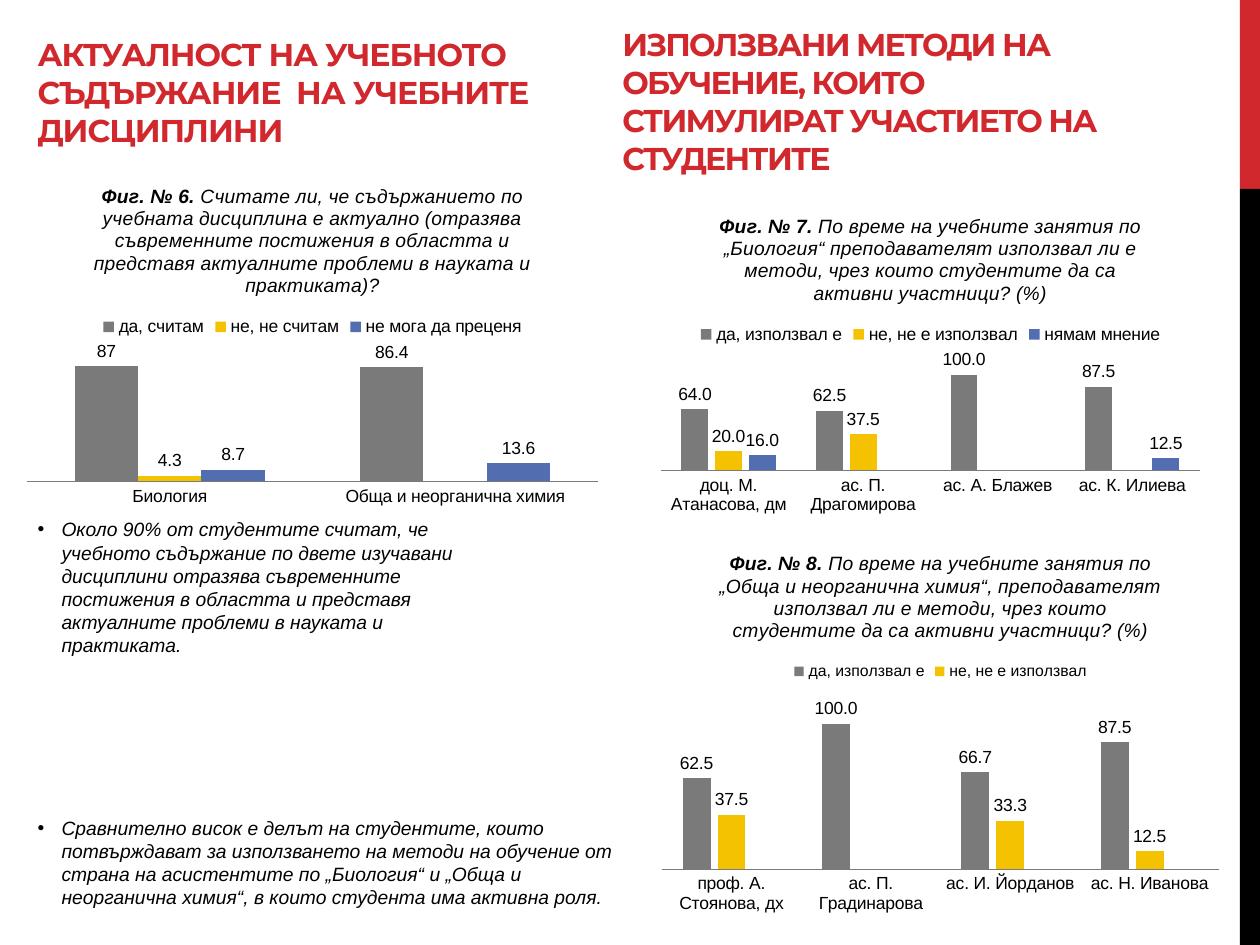
from lxml.etree import SubElement
from pptx import Presentation
from pptx.chart.data import CategoryChartData
from pptx.dml.color import RGBColor
from pptx.enum.chart import XL_CHART_TYPE, XL_LABEL_POSITION, XL_LEGEND_POSITION, XL_TICK_MARK
from pptx.enum.shapes import MSO_SHAPE
from pptx.enum.text import MSO_ANCHOR
from pptx.oxml import parse_xml
from pptx.oxml.ns import nsdecls, qn
from pptx.util import Pt

RED = RGBColor(0xD1, 0x28, 0x2E)
BLACK = RGBColor(0, 0, 0)
GRAY = RGBColor(0x7A, 0x7A, 0x7A)
YELLOW = RGBColor(0xF5, 0xC2, 0x01)
BLUE = RGBColor(0x52, 0x6D, 0xB0)
SERIES_COLORS = (GRAY, YELLOW, BLUE)

PX = 9144  # 100 px to the inch
DECIMAL = "0.0;[Red]0.0"
HEADING = {"name": "Montserrat", "size": Pt(18), "bold": True}
BODY = {"name": "Arial", "size": Pt(11), "italic": True}
CAPTION = {**BODY, "bold": False}
FIGURE_NO = {**BODY, "bold": True}
CHART = {"name": "Arial", "size": Pt(10)}


class SlideBuilder:
    def __init__(self, slide):
        self.slide = slide

    def box(self, *px):
        return [round(value * PX) for value in px]

    def style(self, font, formats, color=BLACK):
        for key, value in formats.items():
            setattr(font, key, value)
        font.color.rgb = color

    def band(self, at, color):
        band = self.slide.shapes.add_shape(MSO_SHAPE.RECTANGLE, *self.box(*at))
        band.shadow.inherit = False
        band.fill.solid()
        band.fill.fore_color.rgb = color
        band.line.fill.background()

    def text(self, at, words, formats, color=BLACK, anchor=MSO_ANCHOR.TOP):
        frame = self.slide.shapes.add_textbox(*self.box(*at)).text_frame
        frame.word_wrap = True
        frame.vertical_anchor = anchor
        paragraph = frame.paragraphs[0]
        run = paragraph.add_run()
        run.text = words
        self.style(run.font, formats, color)
        return paragraph, run

    def heading(self, at, words, anchor, spacing):
        _, run = self.text(at, words, HEADING, RED, anchor)
        run.font._element.set("spc", str(spacing))

    def bullet(self, at, words):
        paragraph, _ = self.text(at, words, BODY)
        paragraph.space_after = Pt(10)
        properties = paragraph._p.get_or_add_pPr()
        properties.set("marL", str(19 * PX))
        properties.set("indent", str(-19 * PX))
        SubElement(properties, qn("a:buFont")).set("typeface", "Arial")
        SubElement(properties, qn("a:buChar")).set("char", "•")

    def chart(self, at, figure, question, categories, series, plot_y, plot_h,
              top, formats, overlap=-25, legend_size=10, unlisted=None):
        data = CategoryChartData()
        data.categories = categories
        for name, values in series:
            data.add_series(name, values)
        chart = self.slide.shapes.add_chart(
            XL_CHART_TYPE.COLUMN_CLUSTERED, *self.box(*at), data).chart
        self.style(chart.font, CHART)

        # Caption
        chart.has_title = True
        caption = chart.chart_title.text_frame.paragraphs[0]
        for words, look in ((figure + " ", FIGURE_NO), (question, CAPTION)):
            run = caption.add_run()
            run.text = words
            self.style(run.font, look)
        chart.chart_title.include_in_layout = False

        # Legend
        chart.has_legend = True
        legend = chart.legend
        legend.position = XL_LEGEND_POSITION.TOP
        legend.include_in_layout = False
        self.style(legend.font, {**CHART, "size": Pt(legend_size)})
        if unlisted is not None:
            legend._element.find(qn("c:legendPos")).addnext(parse_xml(
                f'<c:legendEntry {nsdecls("c")}><c:idx val="{unlisted}"/>'
                '<c:delete val="1"/></c:legendEntry>'))

        # Axes
        values_axis, names_axis = chart.value_axis, chart.category_axis
        values_axis.visible = False
        values_axis.has_major_gridlines = False
        values_axis.minimum_scale = 0
        values_axis.maximum_scale = top
        names_axis.major_tick_mark = XL_TICK_MARK.NONE
        names_axis.format.line.color.rgb = GRAY

        # Columns and their labels
        plot = chart.plots[0]
        plot.gap_width = 150
        plot.overlap = overlap
        plot.vary_by_categories = False
        for column, color, number_format in zip(plot.series, SERIES_COLORS, formats):
            column.format.fill.solid()
            column.format.fill.fore_color.rgb = color
            labels = column.data_labels
            labels.show_value = True
            labels.position = XL_LABEL_POSITION.OUTSIDE_END
            labels.number_format = number_format
            labels.number_format_is_linked = False
            self.style(labels.font, CHART)

        # Plot area, in fractions of the chart
        plot_area = chart._chartSpace.chart.plotArea
        for old in plot_area.findall(qn("c:layout")):
            plot_area.remove(old)
        layout = parse_xml(f'<c:layout {nsdecls("c")}><c:manualLayout/></c:layout>')
        settings = {"layoutTarget": "inner", "xMode": "edge", "yMode": "edge",
                    "x": 0.02, "y": plot_y, "w": 0.96, "h": plot_h}
        for tag, value in settings.items():
            SubElement(layout[0], qn("c:" + tag)).set("val", str(value))
        plot_area.insert(0, layout)


def main():
    deck = Presentation()
    deck.slide_width, deck.slide_height = 1000 * PX, 750 * PX
    page = SlideBuilder(deck.slides.add_slide(deck.slide_layouts[6]))

    # Side band
    page.band((984, 0, 16, 150), RED)
    page.band((984, 150, 16, 600), BLACK)

    # Left column: relevance of the content
    page.heading((20, 21, 425, 102),
                 "АКТУАЛНОСТ НА УЧЕБНОТО СЪДЪРЖАНИЕ  НА УЧЕБНИТЕ ДИСЦИПЛИНИ",
                 MSO_ANCHOR.BOTTOM, -60)
    page.bullet((20, 406, 390, 118),
                "Около 90% от студентите считат, че учебното съдържание по двете изучавани "
                "дисциплини отразява съвременните постижения в областта и представя "
                "актуалните проблеми в науката и практиката.")
    page.bullet((20, 643, 496, 94),
                "Сравнително висок е делът на студентите, които потвърждават за използването "
                "на методи на обучение от страна на асистентите по „Биология“ и „Обща и "
                "неорганична химия“, в които студента има активна роля.")
    page.chart((12, 131, 472, 276), "Фиг. № 6.",
               "Считате ли, че съдържанието по учебната дисциплина е актуално (отразява "
               "съвременните постижения в областта и представя актуалните проблеми в "
               "науката и практиката)?",
               ["Биология", "Обща и неорганична химия"],
               [("да, считам", (87, 86.4)),
                ("не, не считам", (4.3, None)),
                ("не мога да преценя", (8.7, 13.6))],
               0.53, 0.38, 100, ["General"] * 3, overlap=0)

    # Right column: teaching methods
    page.heading((484, 29, 425, 102),
                 "ИЗПОЛЗВАНИ МЕТОДИ НА ОБУЧЕНИЕ, КОИТО  СТИМУЛИРАТ УЧАСТИЕТО НА СТУДЕНТИТЕ",
                 MSO_ANCHOR.MIDDLE, -100)
    page.chart((516, 155, 445, 260), "Фиг. № 7.",
               "По време на учебните занятия по „Биология“ преподавателят използвал ли е "
               "методи, чрез които студентите да са активни участници? (%)",
               ["доц. М. Атанасова, дм", "ас. П. Драгомирова", "ас. А. Блажев", "ас. К. Илиева"],
               [("да, използвал е", (64, 62.5, 100, 87.5)),
                ("не, не е използвал", (20, 37.5, None, None)),
                ("нямам мнение", (16, None, None, 12.5))],
               0.49, 0.35, 120, [DECIMAL] * 3)
    page.chart((516, 422, 461, 308), "Фиг. № 8.",
               "По време на учебните занятия по „Обща и неорганична химия“, преподавателят "
               "използвал ли е методи, чрез които студентите да са активни участници? (%)",
               ["проф. А. Стоянова, дх", "ас. П. Градинарова", "ас. И. Йорданов", "ас. Н. Иванова"],
               [("да, използвал е", (62.5, 100, 66.7, 87.5)),
                ("не, не е използвал", (37.5, None, 33.3, 12.5)),
                ("Series 3", (None,) * 4)],
               0.42, 0.45, 120, [DECIMAL] * 3, legend_size=9, unlisted=2)

    deck.save("out.pptx")


if __name__ == "__main__":
    main()
